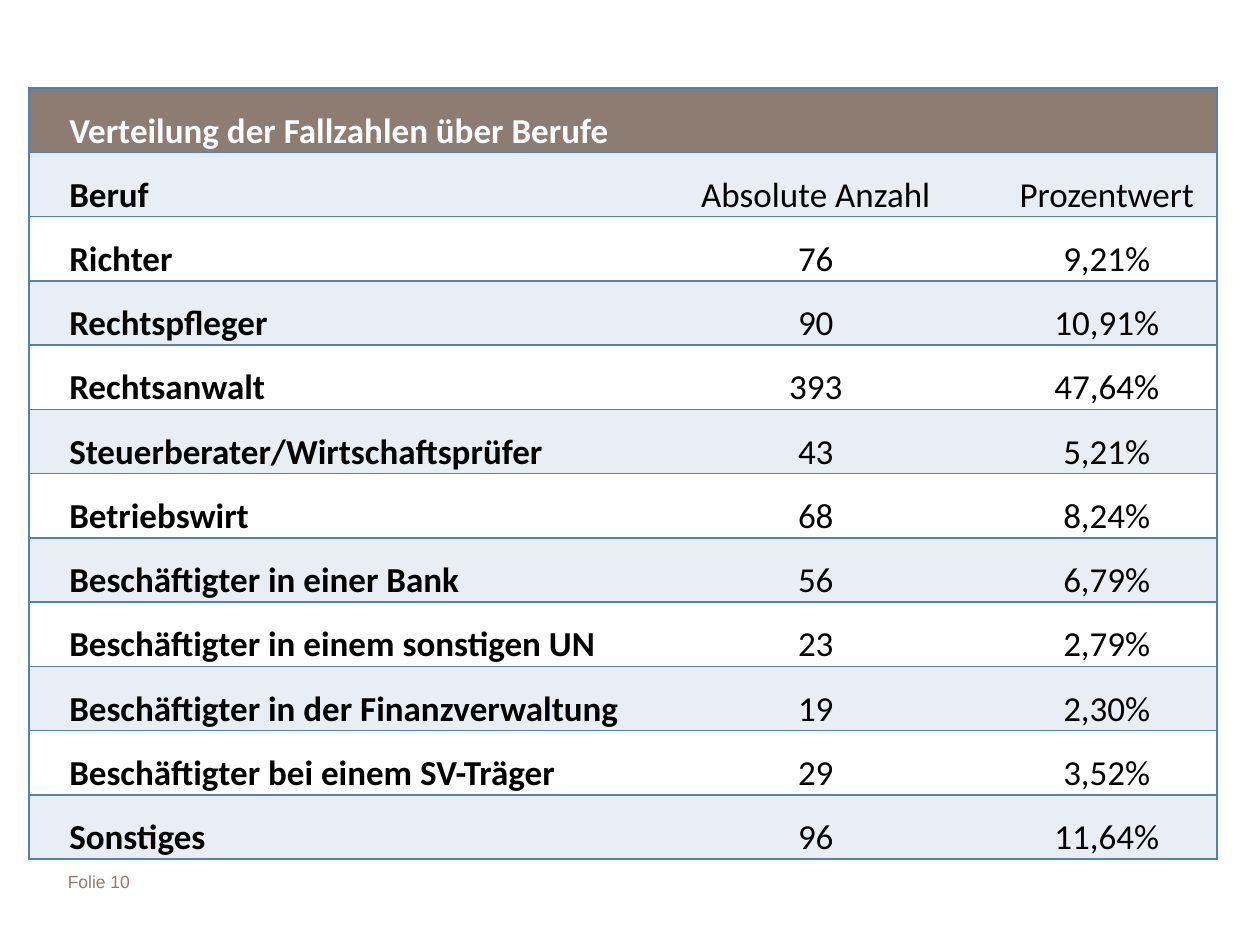
from pptx import Presentation
from pptx.dml.color import RGBColor
from pptx.enum.text import MSO_ANCHOR, PP_ALIGN
from pptx.oxml import parse_xml
from pptx.oxml.ns import nsdecls
from pptx.util import Inches, Pt

BROWN = RGBColor(0x8C, 0x7C, 0x72)
BLUE = RGBColor(0x4F, 0x81, 0xBD)
PALE = RGBColor(0xE9, 0xED, 0xF4)
WHITE = RGBColor(0xFF, 0xFF, 0xFF)
BLACK = RGBColor(0, 0, 0)

TITLE = "Verteilung der Fallzahlen über Berufe"
ROWS = [
    (TITLE, "", ""),
    ("Beruf", "Absolute Anzahl", "Prozentwert"),
    ("Richter", "76", "9,21%"),
    ("Rechtspfleger", "90", "10,91%"),
    ("Rechtsanwalt", "393", "47,64%"),
    ("Steuerberater/Wirtschaftsprüfer", "43", "5,21%"),
    ("Betriebswirt", "68", "8,24%"),
    ("Beschäftigter in einer Bank", "56", "6,79%"),
    ("Beschäftigter in einem sonstigen UN", "23", "2,79%"),
    ("Beschäftigter in der Finanzverwaltung", "19", "2,30%"),
    ("Beschäftigter bei einem SV-Träger", "29", "3,52%"),
    ("Sonstiges", "96", "11,64%"),
]
COLUMN_WIDTHS = [4.81, 2.62, 2]
ROW_HEIGHT = 0.51
LAST = len(COLUMN_WIDTHS) - 1


def set_borders(cell, visible_sides):
    """Draw blue lines on the given sides and none on the others."""
    for position, side in enumerate("LRTB"):
        paint = "<a:noFill/>"
        if side in visible_sides:
            paint = f'<a:solidFill><a:srgbClr val="{BLUE}"/></a:solidFill>'
        line = parse_xml(
            f'<a:ln{side} {nsdecls("a")} w="{Pt(1)}">{paint}</a:ln{side}>')
        cell._tc.get_or_add_tcPr().insert(position, line)


def add_run(paragraph, text, font_name, size, color, bold=False):
    run = paragraph.add_run()
    run.text = text
    run.font.name = font_name
    run.font.size = Pt(size)
    run.font.color.rgb = color
    run.font.bold = bold


presentation = Presentation()
presentation.slide_width = Inches(10)
presentation.slide_height = Inches(7.5)
slide = presentation.slides.add_slide(presentation.slide_layouts[6])

# Slide number line
footer = slide.shapes.add_textbox(
    Inches(0.44), Inches(6.86), Inches(2.49), Inches(0.36))
footer.text_frame.word_wrap = True
add_run(footer.text_frame.paragraphs[0], "Folie 10", "Arial", 10, BROWN)

# Table grid
table = slide.shapes.add_table(
    len(ROWS), len(COLUMN_WIDTHS), Inches(0.23), Inches(0.7),
    Inches(sum(COLUMN_WIDTHS)), Inches(ROW_HEIGHT * len(ROWS))).table
table.first_row = False
table.horz_banding = False
for column, width in zip(table.columns, COLUMN_WIDTHS):
    column.width = Inches(width)
for row in table.rows:
    row.height = Inches(ROW_HEIGHT)
table.cell(0, 0).merge(table.cell(0, LAST))

# Cells: brown heading, then pale and white bands
for row_index, texts in enumerate(ROWS):
    is_heading = row_index == 0
    band = BROWN if is_heading else PALE if row_index % 2 else WHITE
    for column_index, text in enumerate(texts):
        cell = table.cell(row_index, column_index)
        cell.fill.solid()
        cell.fill.fore_color.rgb = band
        sides = "TB" + "L" * (column_index == 0) + "R" * (column_index == LAST)
        set_borders(cell, "LRTB" if cell.is_merge_origin else sides)
        if cell.is_spanned:
            continue
        cell.margin_left = cell.margin_right = Inches(0.07)
        cell.margin_top = cell.margin_bottom = 0
        if column_index == LAST and row_index > 1:
            cell.vertical_anchor = MSO_ANCHOR.BOTTOM
        paragraph = cell.text_frame.paragraphs[0]
        paragraph.line_spacing = 1.5
        paragraph.alignment = PP_ALIGN.CENTER if column_index else PP_ALIGN.LEFT
        properties = paragraph._p.get_or_add_pPr()
        properties.set("marL", "0")
        properties.set("indent", str(Inches(0.25)))
        add_run(paragraph, text, "Calibri", 20,
                WHITE if is_heading else BLACK, bold=column_index == 0)

presentation.save("out.pptx")
